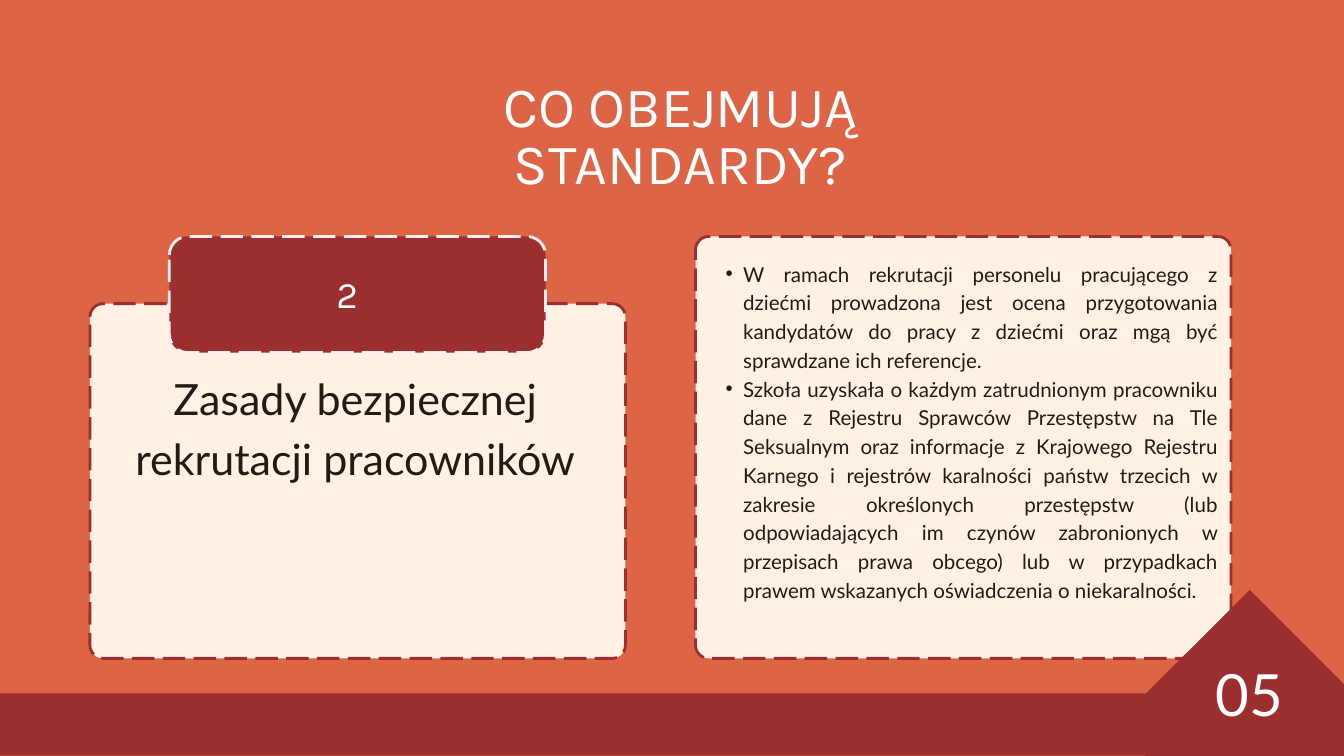
"""Build the slide on the rules for safe staff hiring."""
import lxml.etree
import pptx
import pptx.dml.color
import pptx.enum.dml
import pptx.enum.shapes
import pptx.enum.text
import pptx.oxml.ns
import pptx.util

Cm, Pt = pptx.util.Cm, pptx.util.Pt
Form = pptx.enum.shapes.MSO_SHAPE
Align = pptx.enum.text.PP_ALIGN

HUES = {
    "back": "DD6444",
    "red": "9B2F2F",
    "cream": "FFF2E5",
    "pale": "FFEEEE",
    "white": "FFFFFF",
    "ink": "251B15",
}
LEFT, RIGHT, WIDE = 3.4, 26.29, 20.24
TOP, BASE = 8.94, 24.89
HEAD = 11.48

RULES = [
    "W ramach rekrutacji personelu pracującego z dziećmi prowadzona jest "
    "ocena przygotowania kandydatów do pracy z dziećmi oraz mgą być "
    "sprawdzane ich referencje.",
    "Szkoła uzyskała o każdym zatrudnionym pracowniku dane z Rejestru "
    "Sprawców Przestępstw na Tle Seksualnym oraz informacje z Krajowego "
    "Rejestru Karnego i rejestrów karalności państw trzecich w zakresie "
    "określonych przestępstw (lub odpowiadających im czynów zabronionych w "
    "przepisach prawa obcego) lub w przypadkach prawem wskazanych "
    "oświadczenia o niekaralności.",
]


def tint(name):
    return pptx.dml.color.RGBColor.from_string(HUES[name])


def write(frame, text, size, lead, font="Lato", hue="ink",
          align=Align.CENTER, mark=None):
    frame.word_wrap = True
    frame.auto_size = pptx.enum.text.MSO_AUTO_SIZE.NONE
    frame.vertical_anchor = pptx.enum.text.MSO_ANCHOR.TOP
    frame.margin_left = frame.margin_right = 0
    frame.margin_top = frame.margin_bottom = 0
    frame.text = text
    for para in frame.paragraphs:
        para.alignment = align
        para.line_spacing = Pt(lead)
        para.space_before = para.space_after = Pt(0)
        face = para.runs[0].font
        face.name, face.size = font, Pt(size)
        face.color.rgb = tint(hue)
        if mark:
            props = para._p.get_or_add_pPr()
            props.set("marL", str(Cm(1.32)))
            props.set("indent", str(Cm(-0.66)))
            tag = pptx.oxml.ns.qn("a:buChar")
            lxml.etree.SubElement(props, tag).set("char", mark)


class Deck:
    def __init__(self):
        self.show = pptx.Presentation()
        self.show.slide_width = Cm(50.8)
        self.show.slide_height = Cm(28.58)
        self.slide = self.show.slides.add_slide(self.show.slide_layouts[1])
        fill = self.slide.background.fill
        fill.solid()
        fill.fore_color.rgb = tint("back")

    def shape(self, form, box, hue, edge=None, curve=0):
        item = self.slide.shapes.add_shape(form, *map(Cm, box))
        item.shadow.inherit = False
        item.fill.solid()
        item.fill.fore_color.rgb = tint(hue)
        if curve:
            item.adjustments[0] = curve / min(box[2:])
        if edge:
            item.line.color.rgb = tint(edge)
            item.line.width = Pt(3)
            item.line.dash_style = pptx.enum.dml.MSO_LINE.LONG_DASH
        else:
            item.line.fill.background()

    def card(self, left, top):
        box = (left, top, WIDE, BASE - top)
        self.shape(Form.ROUNDED_RECTANGLE, box, "cream", "red", 0.5)

    def label(self, box, text, **style):
        item = self.slide.shapes.add_textbox(*map(Cm, box))
        write(item.text_frame, text, **style)

    def holder(self, index, box, text, **style):
        item = self.slide.placeholders[index]
        item.left, item.top, item.width, item.height = map(Cm, box)
        write(item.text_frame, text, **style)
        self.slide.shapes._spTree.append(item._element)


def main():
    deck = Deck()
    deck.shape(Form.ROUNDED_RECTANGLE, (-0.89, 26.21, 53.24, 2.36), "red",
               curve=0.22)
    deck.card(LEFT, HEAD)
    deck.shape(Form.ROUNDED_RECTANGLE, (6.4, TOP, 14.22, 4.39), "red",
               "pale", 0.7)
    deck.label((6.4, 10.52, 13.44, 1.47), "2", size=40, lead=40,
               font="Karla", hue="white")
    deck.card(RIGHT, TOP)
    deck.shape(Form.DIAMOND, (42.14, 22.3, 10.19, 10.19), "red")
    deck.holder(0, (15.04, 3.1, 21.36, 4.42), "CO OBEJMUJĄ STANDARDY?",
                size=61, lead=61, font="Karla", hue="white")
    deck.label((3.61, 13.74, 19.63, 4.5),
               "Zasady bezpiecznej rekrutacji pracowników",
               size=46.1, lead=64.6)
    deck.holder(1, (26.77, 9.73, 19.25, 13), "\n".join(RULES),
                size=22, lead=30.8, align=Align.JUSTIFY, mark="•")
    deck.label((44.81, 24.74, 4.85, 2.95), "05", size=62.3, lead=79.1,
               hue="white")
    deck.show.save("out.pptx")


if __name__ == "__main__":
    main()
